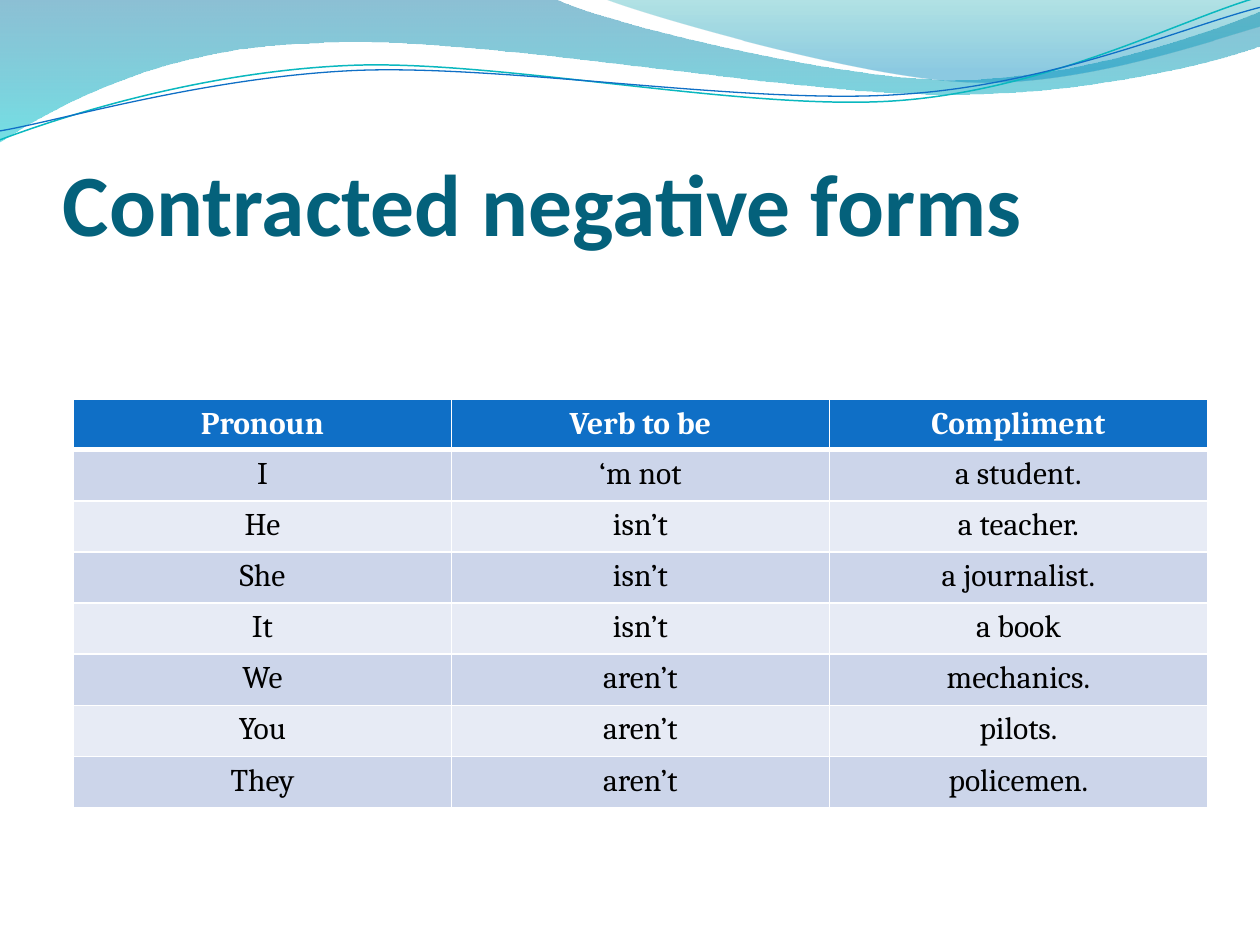
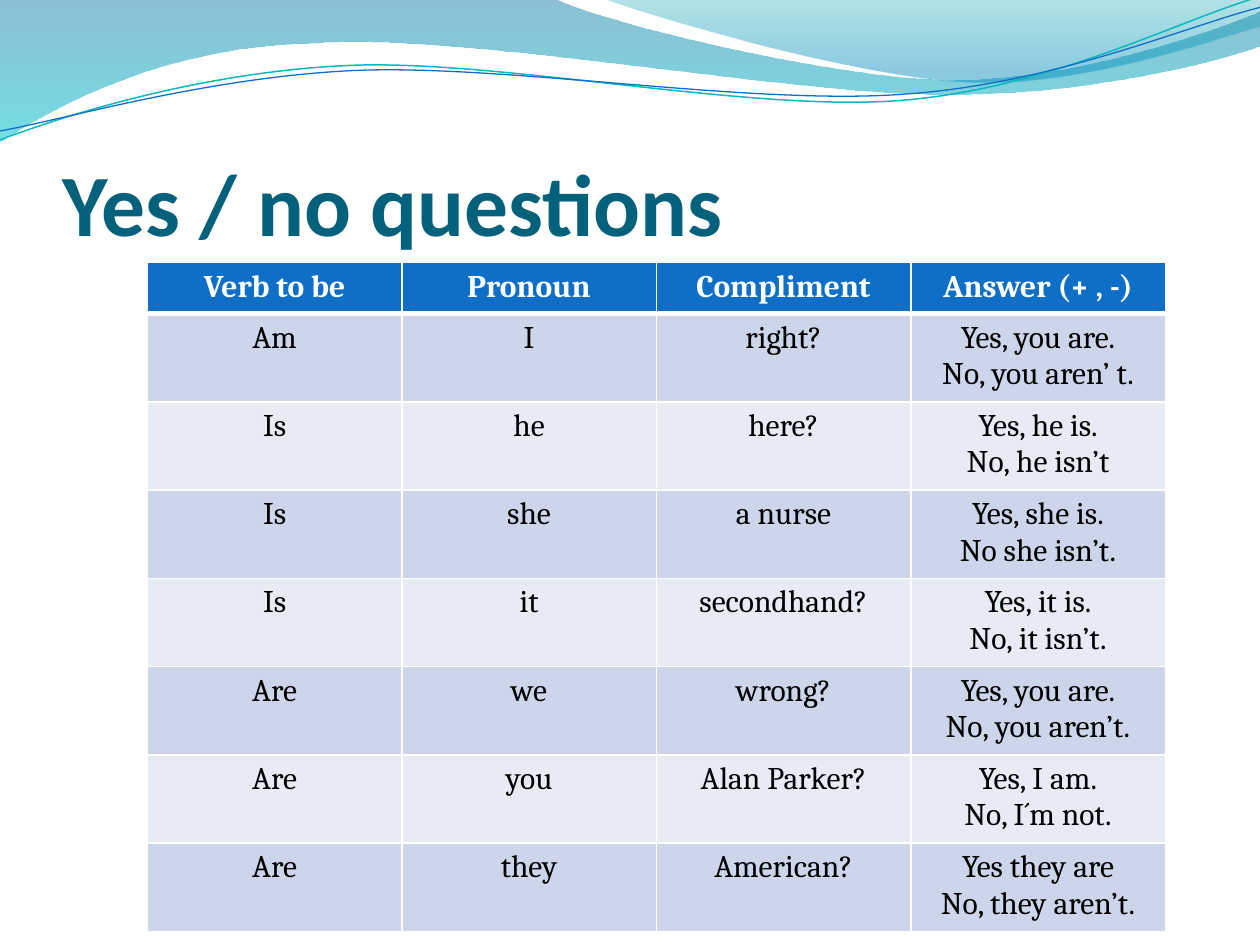
"""Build two English grammar slides: contracted negatives and yes / no questions."""
from dataclasses import dataclass

from lxml import etree
from pptx import Presentation
from pptx import util as u
from pptx.dml.color import RGBColor
from pptx.enum import text
from pptx.oxml import ns


@dataclass(frozen=True)
class Theme:
    title_font: str = "Calibri"
    body_font: str = "Cambria"
    title_size: int = 50
    body_size: int = 18
    title: str = "04617B"
    header: str = "0F6FC6"
    bands: tuple = ("CCD5EA", "E7EBF5")
    white: str = "FFFFFF"
    black: str = "000000"
    back_wave: tuple = ((0, "0074A1", 45), (1, "00C6CF", 55))
    front_wave: tuple = ((0, "00A1A9", 30), (0.8, "008BBF", 45))
    teal_line: str = "0AB8BF"
    blue_line: str = "0F6FC6"


THEME = Theme()

BACK_WAVE = [
    [(0, 0)],
    [(11.18, -0.03)],
    [(12.09, 0.43), (16.87, 1.6), (19.25, 1.6)],
    [(21.67, 1.6), (24.33, 0.66), (25.4, 0.23)],
    [(25.43, 0.91)],
    [(24.97, 1.12), (22.1, 1.93), (18.95, 1.9)],
    [(15.8, 1.9), (9.7, 0.71), (6.53, 0.86)],
    [(3.28, 0.91), (1.17, 2.11), (-0.03, 2.87)],
    [(0, 0)],
]
FRONT_WAVE = [
    [(12.17, -0.03)],
    [(12.93, 0.28), (17.32, 1.57), (19.53, 1.65)],
    [(21.74, 1.75), (24.41, 0.81), (25.4, 0.53)],
    [(25.4, 0)],
    [(12.17, -0.03)],
]
TEAL_LINE = [
    [(0, 2.82)],
    [(1.22, 2.36), (4.01, 1.45), (7.04, 1.32)],
    [(10.03, 1.19), (15.06, 2.26), (18.11, 2.03)],
    [(21.16, 1.8), (23.83, 0.38), (25.35, -0.05)],
]
BLUE_LINE = [
    [(0, 2.64)],
    [(1.19, 2.44), (4.17, 1.55), (7.19, 1.42)],
    [(10.24, 1.3), (15.16, 2.13), (18.21, 1.9)],
    [(21.23, 1.7), (23.9, 0.53), (25.4, 0.15)],
]
WAVES = [(BACK_WAVE, THEME.back_wave), (FRONT_WAVE, THEME.front_wave)]
LINES = [(TEAL_LINE, THEME.teal_line, 0.85), (BLUE_LINE, THEME.blue_line, 0.75)]

LESSONS = [
    {
        "title": "Contracted negative forms",
        "left": 1.48, "top": 8.05, "column": 7.62, "height": 8.23, "header": 0.69,
        "rows": [
            ("Pronoun", "Verb to be", "Compliment"),
            ("I", "‘m not", "a student."),
            ("He", "isn’t", "a teacher."),
            ("She", "isn’t", "a journalist."),
            ("It", "isn’t", "a book"),
            ("We", "aren’t", "mechanics."),
            ("You", "aren’t", "pilots."),
            ("They", "aren’t", "policemen."),
        ],
    },
    {
        "title": "Yes / no questions",
        "left": 2.97, "top": 5.29, "column": 5.13, "height": 13.49, "header": 1.03,
        "rows": [
            ("Verb to be", "Pronoun", "Compliment", "Answer (+ , -)"),
            ("Am", "I", "right?", "Yes, you are.\nNo, you aren’ t."),
            ("Is", "he", "here?", "Yes, he is.\nNo, he isn’t"),
            ("Is", "she", "a nurse", "Yes, she is.\nNo she isn’t."),
            ("Is", "it", "secondhand?", "Yes, it is.\nNo, it isn’t."),
            ("Are", "we", "wrong?", "Yes, you are.\nNo, you aren’t."),
            ("Are", "you", "Alan Parker?", "Yes, I am.\nNo, I´m not."),
            ("Are", "they", "American?", "Yes they are\nNo, they aren’t."),
        ],
    },
]
ROW_HEIGHT = 1.03


def draw_outline(slide, steps, close):
    """Draw a freeform whose one-point steps are straight and three-point steps curved."""
    points = [(u.Cm(x), u.Cm(y)) for step in steps for x, y in step]
    builder = slide.shapes.build_freeform(*points[0])
    builder.add_line_segments(points[1:], close=close)
    outline = builder.convert_to_shape()
    segments = iter(outline._element.xpath(".//a:lnTo"))
    for step in steps[1:]:
        parts = [next(segments) for _ in step]
        if len(step) == 3:
            curve = etree.Element(ns.qn("a:cubicBezTo"))
            parts[0].addprevious(curve)
            for part in parts:
                curve.append(part[0])
                part.getparent().remove(part)
    outline.shadow.inherit = False
    return outline


def add_words(paragraph, words, font, size, color, bold):
    """Add one formatted run to a paragraph."""
    run = paragraph.add_run()
    run.text = words
    run.font.name = font
    run.font.size = u.Pt(size)
    run.font.bold = bold
    run.font.color.rgb = RGBColor.from_string(color)


deck = Presentation()
deck.slide_width, deck.slide_height = u.Cm(25.4), u.Cm(19.05)

for lesson in LESSONS:
    slide = deck.slides.add_slide(deck.slide_layouts[6])

    for steps, stops in WAVES:
        wave = draw_outline(slide, steps, True)
        wave.line.fill.background()
        wave.fill.gradient()
        wave.fill.gradient_angle = 270
        for stop, (position, color, _) in zip(wave.fill.gradient_stops, stops):
            stop.position = position
            stop.color.rgb = RGBColor.from_string(color)
        tints = wave._element.xpath(".//a:gs/a:srgbClr")
        for tint, (_, _, opacity) in zip(tints, stops):
            etree.SubElement(tint, ns.qn("a:alpha"), val=str(opacity * 1000))

    for steps, color, width in LINES:
        ripple = draw_outline(slide, steps, False)
        ripple.fill.background()
        ripple.line.color.rgb = RGBColor.from_string(color)
        ripple.line.width = u.Pt(width)

    heading = slide.shapes.add_textbox(
        u.Cm(1.27), u.Cm(1.96), u.Cm(22.86), u.Cm(3.17)).text_frame
    heading.word_wrap = True
    heading.vertical_anchor = text.MSO_ANCHOR.BOTTOM
    heading.margin_left = heading.margin_right = heading.margin_bottom = 0
    add_words(heading.paragraphs[0], lesson["title"],
              THEME.title_font, THEME.title_size, THEME.title, True)

    rows = lesson["rows"]
    columns = len(rows[0])
    frame = slide.shapes.add_table(
        len(rows), columns, u.Cm(lesson["left"]), u.Cm(lesson["top"]),
        u.Cm(lesson["column"] * columns), u.Cm(lesson["height"]))
    grammar = frame.table
    for column in grammar.columns:
        column.width = u.Cm(lesson["column"])

    for r, entries in enumerate(rows):
        is_header = r == 0
        grammar.rows[r].height = u.Cm(lesson["header"] if is_header else ROW_HEIGHT)
        background = THEME.header if is_header else THEME.bands[(r - 1) % 2]
        ink = THEME.white if is_header else THEME.black
        for c, entry in enumerate(entries):
            cell = grammar.cell(r, c)
            properties = cell._tc.get_or_add_tcPr()
            for side in "LRTB":
                thick = (r, side) in ((0, "B"), (1, "T"))
                border = etree.SubElement(properties, ns.qn(f"a:ln{side}"),
                                          w=str(u.Pt(3 if thick else 1)))
                paint = etree.SubElement(border, ns.qn("a:solidFill"))
                etree.SubElement(paint, ns.qn("a:srgbClr"), val=THEME.white)
            cell.fill.solid()
            cell.fill.fore_color.rgb = RGBColor.from_string(background)
            for i, words in enumerate(entry.split("\n")):
                answer = cell.text_frame
                paragraph = answer.add_paragraph() if i else answer.paragraphs[0]
                paragraph.alignment = text.PP_ALIGN.CENTER
                add_words(paragraph, words, THEME.body_font, THEME.body_size, ink, is_header)
    frame.height = u.Cm(lesson["height"])

deck.save("out.pptx")
